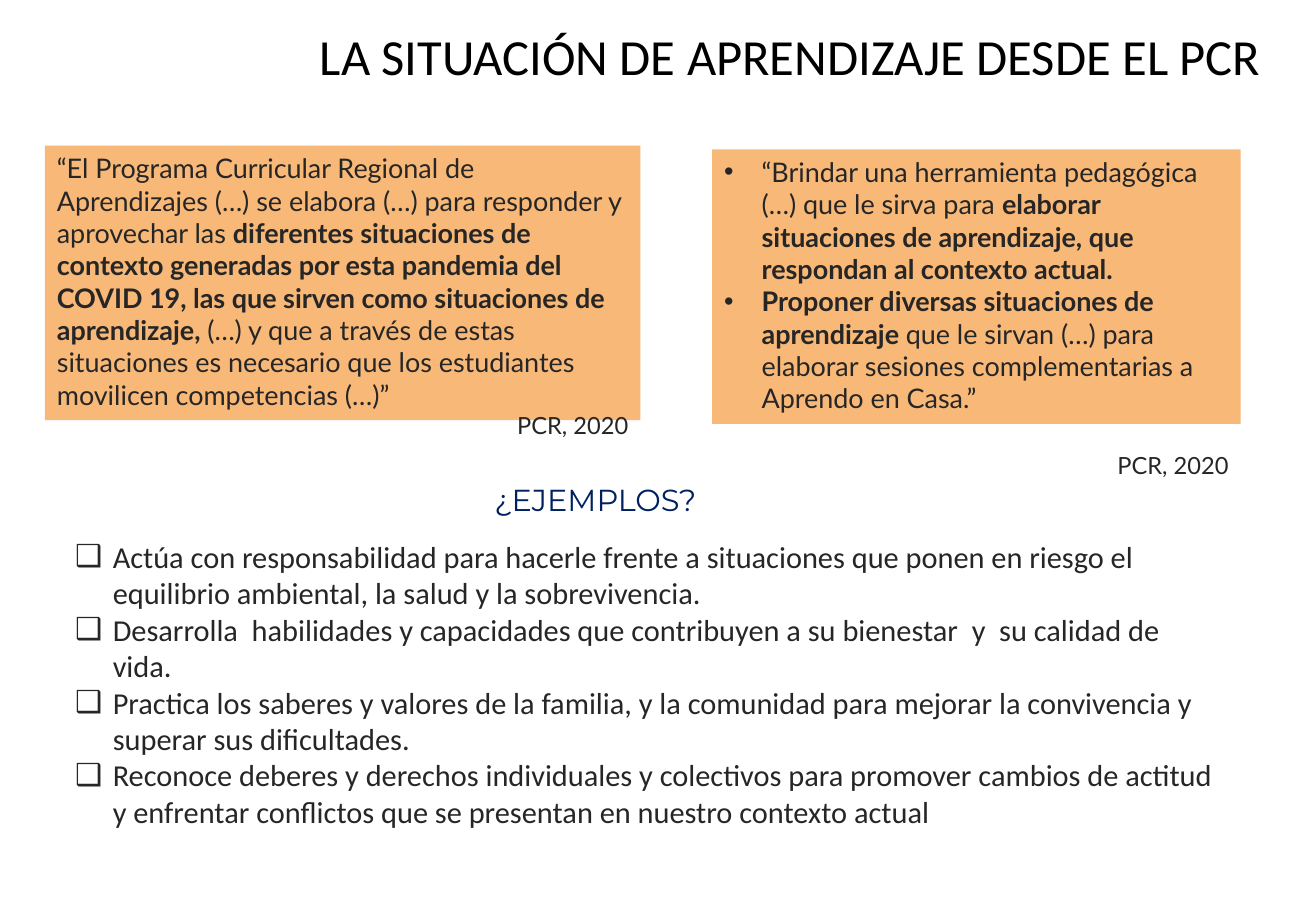
from lxml import etree
from pptx import Presentation
from pptx import util as u
from pptx.dml import color
from pptx.enum import shapes, text
from pptx.oxml import ns

INK = "262626"
ORANGE = "F8B878"
INDENT = u.Inches(0.31)


def rgb(value):
    return color.RGBColor.from_string(value)


class Builder:
    def __init__(self, page, font="Calibri", size=18, ink=INK):
        self.page = page
        self.font = font
        self.size = size
        self.ink = ink

    def frame(self, box, anchor=text.MSO_ANCHOR.TOP):
        frame = box.text_frame
        frame.word_wrap = True
        frame.auto_size = text.MSO_AUTO_SIZE.NONE
        frame.vertical_anchor = anchor
        return frame

    def text_box(self, left, top, width, height, anchor=text.MSO_ANCHOR.TOP):
        box = self.page.shapes.add_textbox(*map(u.Inches, (left, top, width, height)))
        return self.frame(box, anchor)

    def panel(self, left, top, width, height):
        box = self.page.shapes.add_shape(
            shapes.MSO_SHAPE.RECTANGLE, *map(u.Inches, (left, top, width, height)))
        box.shadow.inherit = False
        box.fill.solid()
        box.fill.fore_color.rgb = rgb(ORANGE)
        box.line.fill.background()
        return self.frame(box)

    def paragraph(self, frame, spans, align=text.PP_ALIGN.LEFT, bullet=None,
                  font=None, size=None, ink=None, before=0):
        first = frame.paragraphs[0]
        para = first if not first.runs else frame.add_paragraph()
        para.alignment = align
        if before:
            para.space_before = u.Pt(before)
        if bullet:
            self.bullet(para, bullet)
        for words, bold in spans:
            span = para.add_run()
            span.text = words
            span.font.name = font or self.font
            span.font.size = u.Pt(size or self.size)
            span.font.bold = bold
            span.font.color.rgb = rgb(ink or self.ink)

    def bullet(self, para, mark):
        props = para._p.get_or_add_pPr()
        props.set("marL", str(INDENT))
        props.set("indent", str(-INDENT))
        etree.SubElement(props, ns.qn("a:buFont"), typeface="Arial")
        etree.SubElement(props, ns.qn("a:buChar"), char=mark)


def main():
    deck = Presentation()
    deck.slide_width, deck.slide_height = u.Inches(10.83), u.Inches(7.5)
    builder = Builder(deck.slides.add_slide(deck.slide_layouts[6]))

    title = builder.text_box(0.52, 0.08, 9.96, 0.75, text.MSO_ANCHOR.MIDDLE)
    builder.paragraph(title, [("LA SITUACIÓN DE APRENDIZAJE DESDE EL PCR", False)],
                      align=text.PP_ALIGN.RIGHT, size=30, ink="000000")

    purpose = [[
        ("“El Programa Curricular Regional de Aprendizajes (…) se elabora (…) para "
         "responder y aprovechar las ", False),
        ("diferentes situaciones de contexto generadas por esta pandemia del COVID 19, "
         "las que sirven como situaciones de aprendizaje, ", True),
        ("(…) y que a través de estas situaciones es necesario que los estudiantes "
         "movilicen competencias (…)”", False),
    ]]
    goals = [
        [("“Brindar una herramienta pedagógica (…) que le sirva para ", False),
         ("elaborar situaciones de aprendizaje, que respondan al contexto actual.", True)],
        [("Proponer diversas situaciones de aprendizaje ", True),
         ("que le sirvan (…) para elaborar sesiones complementarias a Aprendo en Casa.”",
          False)],
    ]
    quotes = [
        ((0.37, 1.2, 4.9, 2.26), purpose, None, 0),
        ((5.86, 1.23, 4.35, 2.26), goals, "•", 21.6),
    ]
    for place, paragraphs, mark, gap in quotes:
        panel = builder.panel(*place)
        for spans in paragraphs:
            builder.paragraph(panel, spans, bullet=mark, font="Lato", size=16)
        builder.paragraph(panel, [("PCR, 2020", False)], align=text.PP_ALIGN.RIGHT,
                          font="Lato", size=14, before=gap)

    examples = [
        "Actúa con responsabilidad para hacerle frente a situaciones que ponen en riesgo "
        "el equilibrio ambiental, la salud y la sobrevivencia.",
        "Desarrolla  habilidades y capacidades que contribuyen a su bienestar  y  su "
        "calidad de  vida.",
        "Practica los saberes y valores de la familia, y la comunidad para mejorar la "
        "convivencia y superar sus dificultades.",
        "Reconoce deberes y derechos individuales y colectivos para promover cambios de "
        "actitud y enfrentar conflictos que se presentan en nuestro contexto actual",
    ]
    example_list = builder.text_box(0.52, 4.38, 9.66, 2.52)
    for example in examples:
        builder.paragraph(example_list, [(example, False)], bullet="❑")

    heading = builder.text_box(3.05, 3.91, 3.7, 0.4)
    builder.paragraph(heading, [("¿EJEMPLOS?", False)], align=text.PP_ALIGN.CENTER,
                      font="Montserrat", ink="002060")

    deck.save("out.pptx")


if __name__ == "__main__":
    main()
